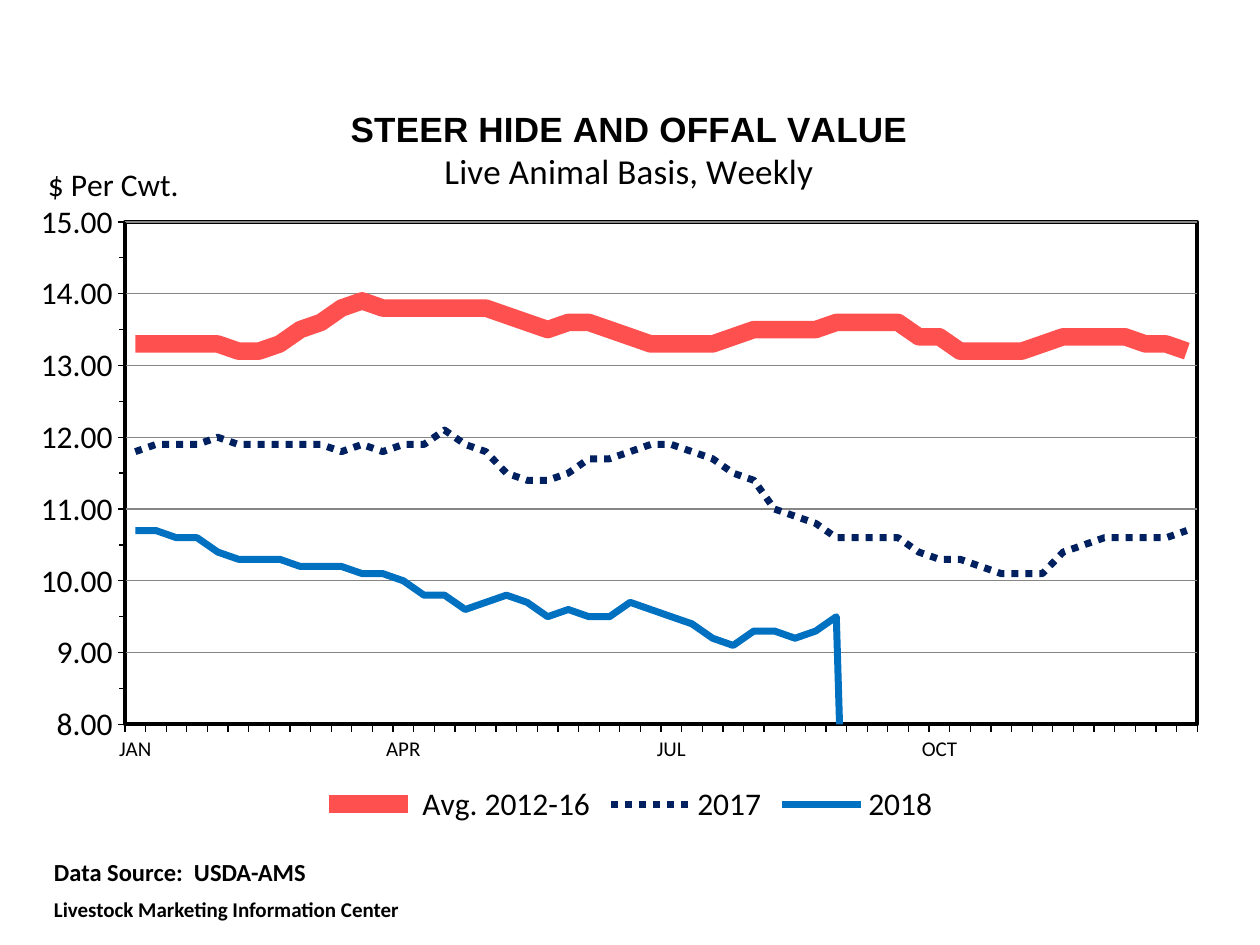
import pptx
import pptx.chart.data
import pptx.dml.color
import pptx.enum.chart
import pptx.enum.dml
import pptx.oxml
import pptx.oxml.ns
import pptx.util

WIDTH, HEIGHT = 10, 7.5
COLORS = {"ink": "000000", "paper": "FFFFFF", "grid": "868686",
          "average": "FF5050", "last_year": "002060", "this_year": "0070C0"}
WEEKS = 52
QUARTERS = {0: "JAN", 13: "APR", 26: "JUL", 39: "OCT"}

# name, color, line width, dash, weekly values
DASH = pptx.enum.dml.MSO_LINE
SERIES = [
    (" Avg. 2012-16", "average", 10, DASH.SOLID, [
        13.3, 13.3, 13.3, 13.3, 13.3, 13.2, 13.2, 13.3, 13.5, 13.6, 13.8, 13.9, 13.8,
        13.8, 13.8, 13.8, 13.8, 13.8, 13.7, 13.6, 13.5, 13.6, 13.6, 13.5, 13.4, 13.3,
        13.3, 13.3, 13.3, 13.4, 13.5, 13.5, 13.5, 13.5, 13.6, 13.6, 13.6, 13.6, 13.4,
        13.4, 13.2, 13.2, 13.2, 13.2, 13.3, 13.4, 13.4, 13.4, 13.4, 13.3, 13.3, 13.2]),
    ("2017", "last_year", 4, DASH.ROUND_DOT, [
        11.8, 11.9, 11.9, 11.9, 12, 11.9, 11.9, 11.9, 11.9, 11.9, 11.8, 11.9, 11.8,
        11.9, 11.9, 12.1, 11.9, 11.8, 11.5, 11.4, 11.4, 11.5, 11.7, 11.7, 11.8, 11.9,
        11.9, 11.8, 11.7, 11.5, 11.4, 11, 10.9, 10.8, 10.6, 10.6, 10.6, 10.6, 10.4,
        10.3, 10.3, 10.2, 10.1, 10.1, 10.1, 10.4, 10.5, 10.6, 10.6, 10.6, 10.6, 10.7]),
    ("2018", "this_year", 4, DASH.SOLID, [
        10.7, 10.7, 10.6, 10.6, 10.4, 10.3, 10.3, 10.3, 10.2, 10.2, 10.2, 10.1, 10.1,
        10, 9.8, 9.8, 9.6, 9.7, 9.8, 9.7, 9.5, 9.6, 9.5, 9.5, 9.7, 9.6,
        9.5, 9.4, 9.2, 9.1, 9.3, 9.3, 9.2, 9.3, 9.5]),
]


def rgb(name):
    return pptx.dml.color.RGBColor.from_string(COLORS[name])


def share(left, top, width, height):
    """Turn shares of the slide into lengths."""
    return [pptx.util.Inches(part * size) for part, size in
            zip((left, top, width, height), (WIDTH, HEIGHT) * 2)]


def style_font(font, size, bold=False, name="Calibri"):
    font.size = pptx.util.Pt(size)
    font.bold = bold
    font.name = name
    font.color.rgb = rgb("ink")


def style_line(line, color, width):
    line.color.rgb = rgb(color)
    line.width = pptx.util.Pt(width)


def chart_xml(text):
    return pptx.oxml.parse_xml(text.replace(">", " " + pptx.oxml.ns.nsdecls("c", "a") + ">", 1))


def manual_layout(inner=False, **shares):
    target = '<c:layoutTarget val="inner"/>' if inner else ""
    modes = "".join(f'<c:{key}Mode val="edge"/>' for key in "xy")
    places = "".join(f'<c:{key} val="{value}"/>' for key, value in shares.items())
    return chart_xml(f"<c:layout><c:manualLayout>{target}{modes}{places}"
                     "</c:manualLayout></c:layout>")


def place_title(title, x, y):
    element = title._element
    for old in element.findall(pptx.oxml.ns.qn("c:layout")):
        element.remove(old)
    element.find(pptx.oxml.ns.qn("c:tx")).addnext(manual_layout(x=x, y=y))


def format_titles(chart):
    chart.has_title = True
    frame = chart.chart_title.text_frame
    frame.text = "STEER HIDE AND OFFAL VALUE\nLive Animal Basis, Weekly"
    heading, subtitle = frame.paragraphs
    style_font(heading.runs[0].font, 20, True, "Arial")
    style_font(subtitle.runs[0].font, 20)
    place_title(chart.chart_title, 0.267, 0.028)

    unit = chart.value_axis.axis_title
    unit.text_frame.text = "$ Per Cwt."
    style_font(unit.text_frame.paragraphs[0].runs[0].font, 18)
    body = unit.text_frame._txBody.bodyPr
    body.set("rot", "0")
    body.set("vert", "horz")
    place_title(unit, 0.017, 0.098)


def format_axes(chart):
    tick = pptx.enum.chart.XL_TICK_MARK
    values, weeks = chart.value_axis, chart.category_axis
    for axis, size in ((values, 18), (weeks, 12)):
        axis.major_tick_mark = tick.OUTSIDE
        style_line(axis.format.line, "ink", 0.75)
        style_font(axis.tick_labels.font, size)
    values.minimum_scale, values.maximum_scale = 8, 15
    values.major_unit, values.minor_unit = 1, 0.5
    values.minor_tick_mark = tick.OUTSIDE
    values.tick_labels.number_format = "#,##0.00"
    values.tick_labels.number_format_is_linked = False
    style_line(values.major_gridlines.format.line, "grid", 0.75)

    # One label and one tick per week
    multi_level = weeks._element.find(pptx.oxml.ns.qn("c:noMultiLvlLbl"))
    for tag in ("tickLblSkip", "tickMarkSkip"):
        multi_level.addprevious(chart_xml(f'<c:{tag} val="1"></c:{tag}>'))


def format_plot_area(chart):
    area = chart._chartSpace.chart.plotArea
    for old in area.findall(pptx.oxml.ns.qn("c:layout")):
        area.remove(old)
    area.insert(0, manual_layout(True, x=0.085, y=0.185, w=0.88, h=0.674))
    area.append(chart_xml(
        f'<c:spPr><a:solidFill><a:srgbClr val="{COLORS["paper"]}"/></a:solidFill>'
        f'<a:ln w="{pptx.util.Pt(2.25)}"><a:solidFill><a:srgbClr val="{COLORS["ink"]}"/>'
        "</a:solidFill></a:ln></c:spPr>"))
    # Weeks without data drop to zero
    blanks = chart._chartSpace.chart.find(pptx.oxml.ns.qn("c:dispBlanksAs"))
    blanks.set("val", "zero")


def add_line_chart(slide):
    data = pptx.chart.data.CategoryChartData(number_format="#,##0.00")
    data.categories = [QUARTERS.get(week, "") for week in range(WEEKS)]
    for name, _, _, _, values in SERIES:
        data.add_series(name, values + [None] * (WEEKS - len(values)))
    chart = slide.shapes.add_chart(pptx.enum.chart.XL_CHART_TYPE.LINE,
                                   *share(0.017, 0.089, 0.967, 0.789), data).chart
    style_font(chart.font, 18)
    chart.plots[0].vary_by_categories = False
    for series, (_, color, width, dash, _) in zip(chart.plots[0].series, SERIES):
        series.smooth = False
        series.marker.style = pptx.enum.chart.XL_MARKER_STYLE.NONE
        style_line(series.format.line, color, width)
        series.format.line.dash_style = dash
    format_titles(chart)
    format_axes(chart)
    format_plot_area(chart)
    chart.has_legend = True
    chart.legend.position = pptx.enum.chart.XL_LEGEND_POSITION.BOTTOM
    chart.legend.include_in_layout = False
    style_font(chart.legend.font, 18)


def add_source_note(slide):
    frame = slide.shapes.add_textbox(*share(0.033, 0.9, 0.45, 0.085)).text_frame
    frame.word_wrap = True
    frame.text = "Data Source:  USDA-AMS\nLivestock Marketing Information Center"
    for paragraph, size in zip(frame.paragraphs, (14, 12)):
        style_font(paragraph.runs[0].font, size, True)
    frame.paragraphs[1].space_before = pptx.util.Pt(6)


def main():
    presentation = pptx.Presentation()
    presentation.slide_width = pptx.util.Inches(WIDTH)
    presentation.slide_height = pptx.util.Inches(HEIGHT)
    slide = presentation.slides.add_slide(presentation.slide_layouts[6])
    add_line_chart(slide)
    add_source_note(slide)
    presentation.save("out.pptx")


if __name__ == "__main__":
    main()
